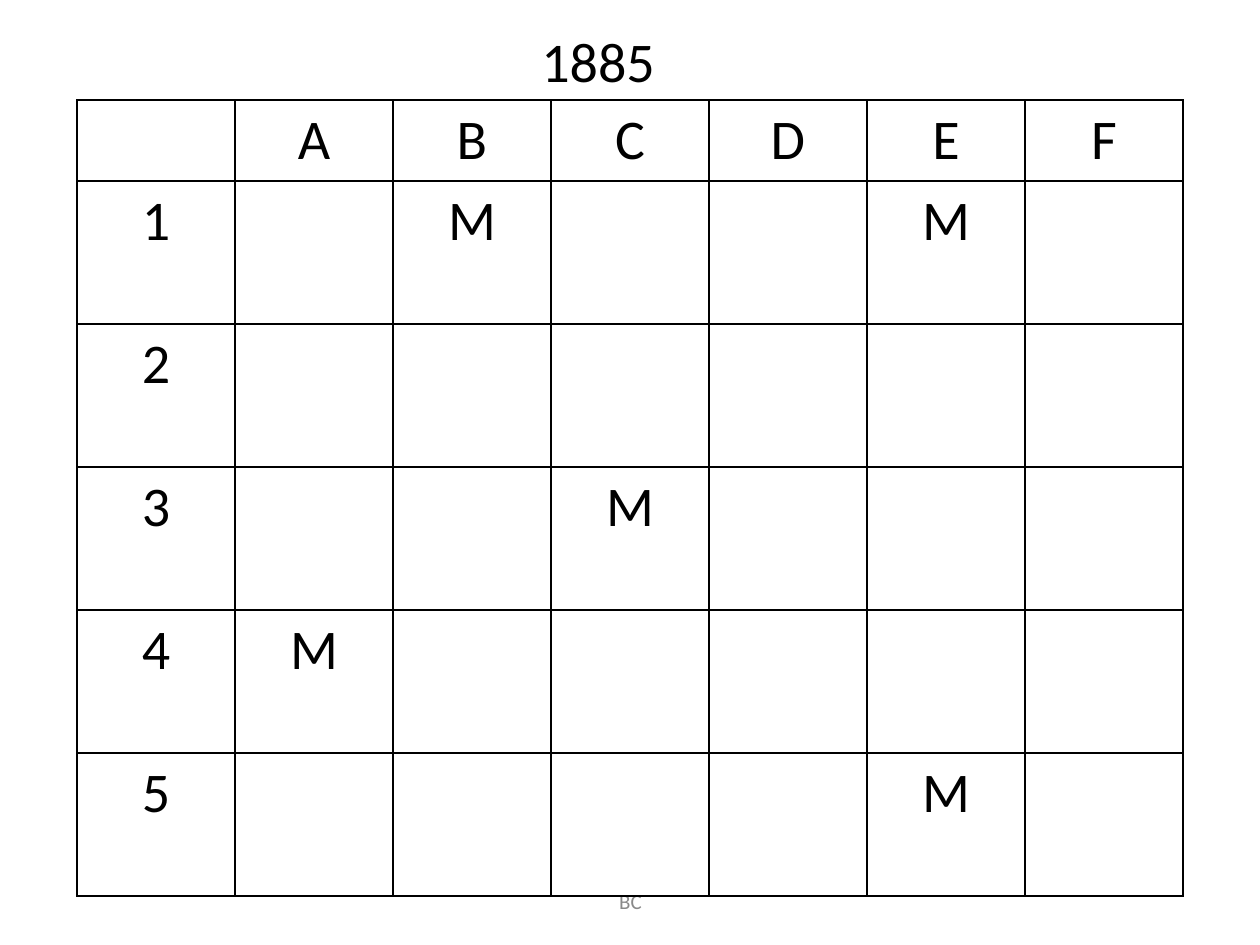
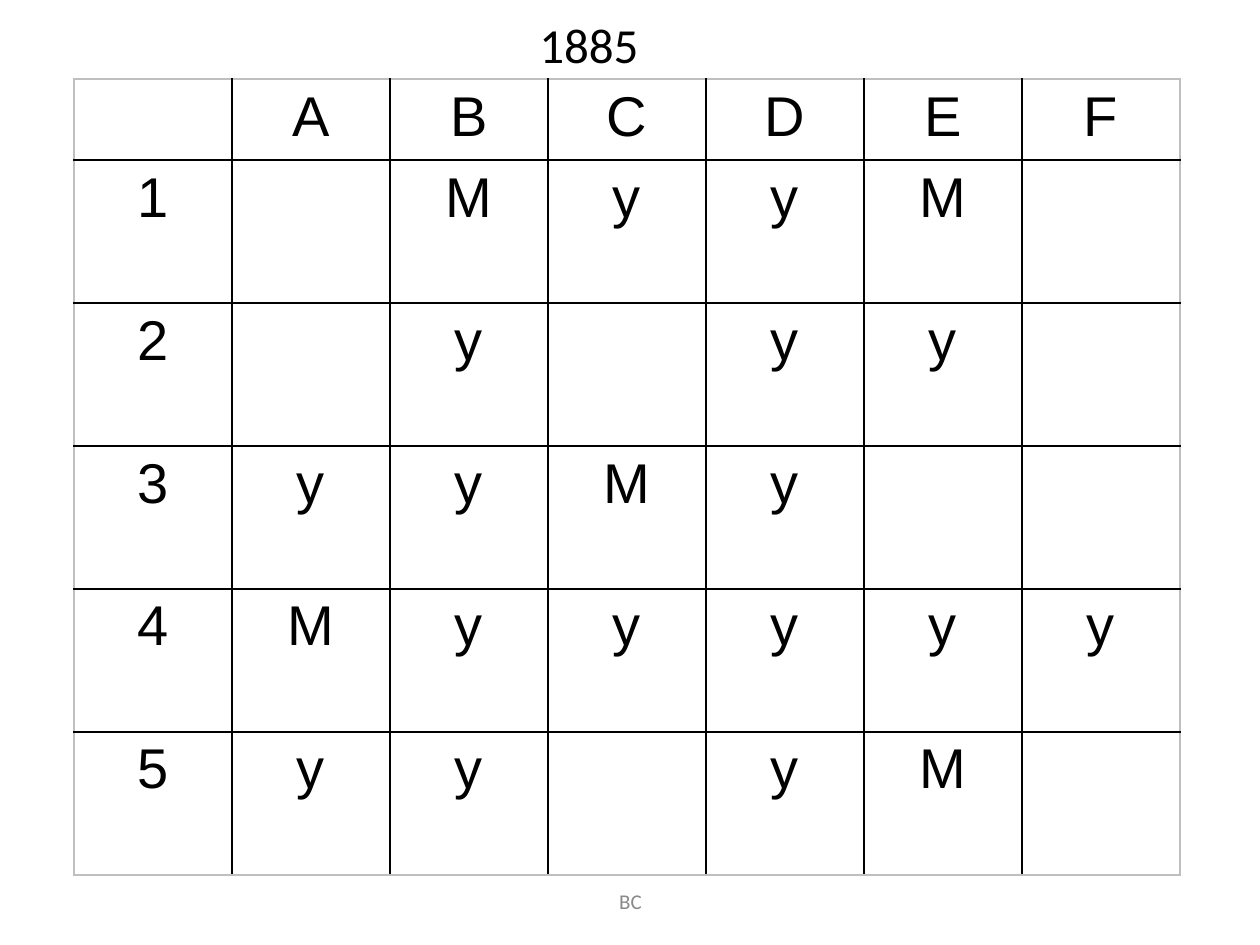
from lxml.etree import SubElement
from pptx import Presentation
from pptx.dml.color import RGBColor
from pptx.enum.text import MSO_ANCHOR, PP_ALIGN
from pptx.oxml.ns import qn
from pptx.util import Emu, Pt

PX_PER_INCH = 126
SLIDE_WIDTH, SLIDE_HEIGHT = 1260, 945
COLUMN_WIDTH, HEADER_HEIGHT, ROW_HEIGHT = 158, 81, 143
COLORS = {"text": "000000", "grid": "000000", "faint": "BFBFBF", "footer": "898989"}

COLUMN_NAMES = "ABCDEF"
# One string per numbered row, one letter per column; "." is an empty square.
MARKED_SQUARES = [".M..M.", "......", "..M...", "M.....", "....M."]
FILLED_SQUARES = [".MyyM.", ".y.yy.", "yyMy..", "Myyyyy", "yy.yM."]


def px(length):
    return Emu(round(length * 914400 / PX_PER_INCH))


def write_text(frame, text, *, size, font="Calibri", color="text",
               align=PP_ALIGN.LEFT):
    paragraph = frame.paragraphs[0]
    paragraph.alignment = align
    run = paragraph.add_run()
    run.text = text
    run.font.size = Pt(size)
    run.font.name = font
    run.font.color.rgb = RGBColor.from_string(COLORS[color])


def add_label(slide, box, text, anchor=MSO_ANCHOR.TOP, **text_format):
    frame = slide.shapes.add_textbox(*map(px, box)).text_frame
    frame.word_wrap = True
    frame.vertical_anchor = anchor
    write_text(frame, text, **text_format)


def add_footer(slide):
    add_label(slide, (431, 876, 399, 50), "BC", anchor=MSO_ANCHOR.MIDDLE,
              size=12, color="footer", align=PP_ALIGN.CENTER)


def set_border(cell, side, color):
    line = SubElement(cell._tc.get_or_add_tcPr(), qn(f"a:ln{side}"), w=str(Pt(1)))
    fill = SubElement(line, qn("a:solidFill"))
    SubElement(fill, qn("a:srgbClr"), val=COLORS[color])


def add_grid(slide, left, top, squares, font, edge):
    """Draw the lettered and numbered grid; edge colours its outer frame."""
    rows = ["." + COLUMN_NAMES]
    rows += [f"{number}{marks}" for number, marks in enumerate(squares, 1)]
    row_count, column_count = len(rows), len(rows[0])
    height = HEADER_HEIGHT + ROW_HEIGHT * len(squares)
    table = slide.shapes.add_table(
        row_count, column_count, px(left), px(top),
        px(COLUMN_WIDTH * column_count), px(height)).table
    table.first_row = table.horz_banding = False
    for column in table.columns:
        column.width = px(COLUMN_WIDTH)
    for row_index, marks in enumerate(rows):
        table.rows[row_index].height = px(ROW_HEIGHT if row_index else HEADER_HEIGHT)
        for column_index, mark in enumerate(marks):
            cell = table.cell(row_index, column_index)
            outer_sides = {"L": column_index == 0, "R": column_index == column_count - 1,
                           "T": row_index == 0, "B": row_index == row_count - 1}
            for side, is_outer in outer_sides.items():
                set_border(cell, side, edge if is_outer else "grid")
            cell.fill.background()
            if mark != ".":
                write_text(cell.text_frame, mark, size=32, font=font,
                           align=PP_ALIGN.CENTER)


def add_grid_slide(presentation, title_box, title_size, **grid):
    slide = presentation.slides.add_slide(presentation.slide_layouts[6])
    add_footer(slide)
    add_grid(slide, **grid)
    add_label(slide, title_box, "1885", size=title_size)


def main():
    presentation = Presentation()
    presentation.slide_width = px(SLIDE_WIDTH)
    presentation.slide_height = px(SLIDE_HEIGHT)
    add_grid_slide(presentation, (529, 20, 150, 79), 32, left=77, top=100,
                   squares=MARKED_SQUARES, font="Calibri", edge="grid")
    add_grid_slide(presentation, (527, 8, 200, 72), 28, left=74, top=79,
                   squares=FILLED_SQUARES, font="Arial", edge="faint")
    presentation.save("out.pptx")


if __name__ == "__main__":
    main()
